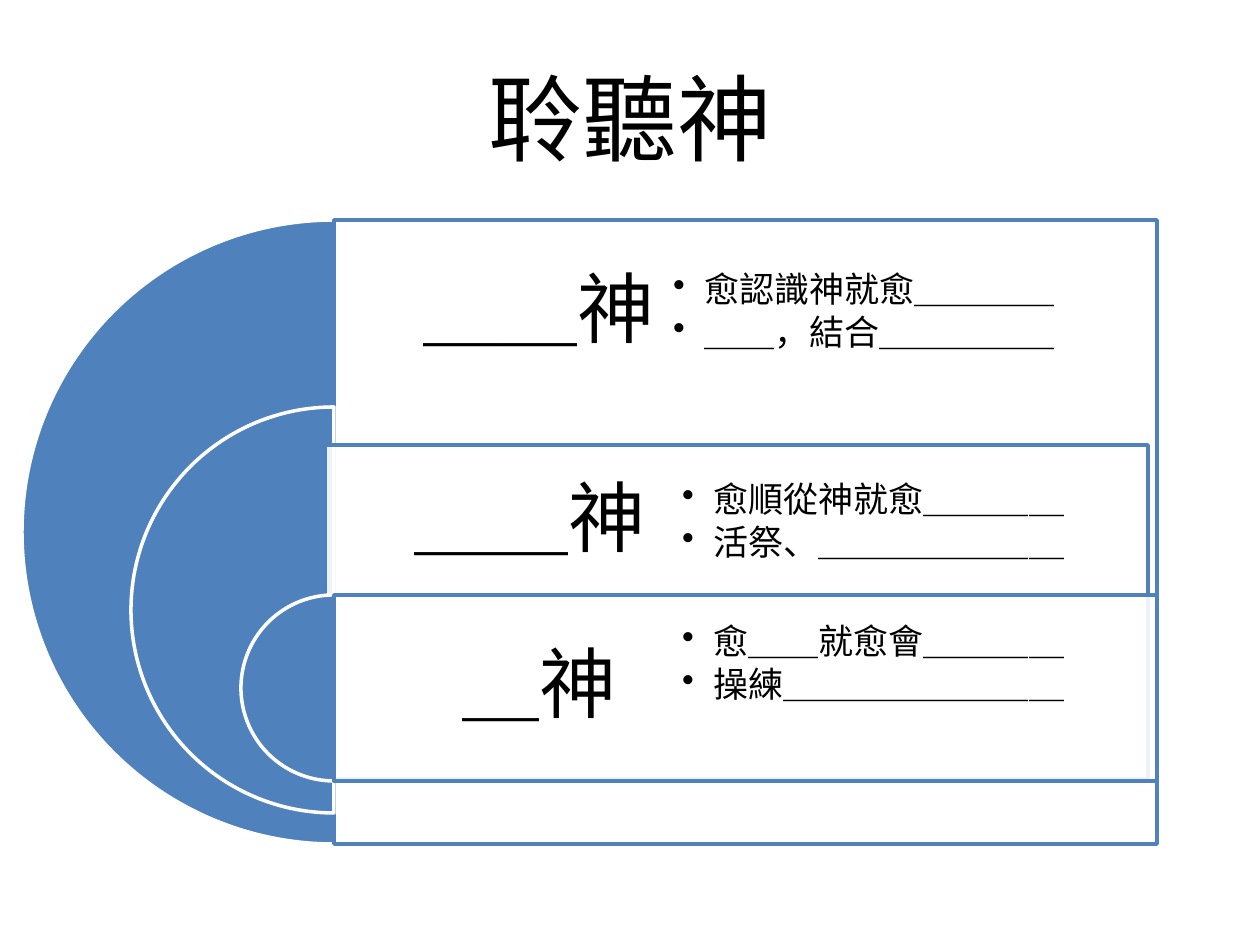
from lxml.etree import SubElement
from pptx import Presentation
from pptx.dml.color import RGBColor
from pptx.enum.shapes import MSO_SHAPE as Shape
from pptx.enum.text import MSO_ANCHOR as Anchor, PP_ALIGN as Align
from pptx.oxml.ns import qn
from pptx.util import Emu, Pt

PX = 914400 / 126
BLUE, WHITE, BLACK = "4F81BD", "FFFFFF", "000000"


def px(*lengths):
    """Turn pixel lengths into EMU."""
    return [Emu(round(length * PX)) for length in lengths]


def color(target, hex_color):
    """Give a fill or a font a solid colour."""
    fill = getattr(target, "fill", target)
    fill.solid()
    fill.fore_color.rgb = RGBColor.from_string(hex_color)


presentation = Presentation()
presentation.slide_width, presentation.slide_height = px(1260, 945)
slide = presentation.slides.add_slide(presentation.slide_layouts[5])
texts = []  # text frame, lines, size, alignment, space after, inset

title = slide.shapes.title
title.left, title.top, title.width, title.height = px(63, 38, 1134, 158)
texts.append((title.text_frame, ["聆聽神"], 54, Align.CENTER, 0, 12))

# Half circles share one centre line; each box sits to its right
AXIS = 334
rings = [
    # circle top, diameter, box left, box top, box height, label height, label
    (220, 624, AXIS, 220, 624, 186, "＿＿神"),
    (407, 406, 325, 445, 334, 154, "＿＿神"),
    (595, 186, AXIS, 595, 186, 186, "＿神"),
]
for top, diameter, box_left, box_top, box_height, label_height, label in rings:
    half_circle = slide.shapes.add_shape(
        Shape.PIE, *px(AXIS - diameter / 2, top, diameter, diameter))
    half_circle.adjustments[0] = 54
    half_circle.adjustments[1] = 162
    box = slide.shapes.add_shape(
        Shape.RECTANGLE, *px(box_left, box_top, 823, box_height))
    for shape, fill, line in ((half_circle, BLUE, WHITE), (box, WHITE, BLUE)):
        shape.shadow.inherit = False
        color(shape.fill, fill)
        color(shape.line, line)
        shape.line.width = Pt(2)
    box_color = box.fill._xPr.find(qn("a:solidFill"))[0]
    SubElement(box_color, qn("a:alpha"), val="90000")

    label_box = slide.shapes.add_textbox(*px(box_left, box_top, 411, label_height))
    texts.append((label_box.text_frame, [label], 44, Align.CENTER, 15, 23))

bullet_lists = [
    (663, 220, ["愈認識神就愈＿＿＿＿", "＿＿，結合＿＿＿＿＿"]),
    (672, 430, ["愈順從神就愈＿＿＿＿", "活祭、＿＿＿＿＿＿＿"]),
    (672, 572, ["愈＿＿就愈會＿＿＿＿", "操練＿＿＿＿＿＿＿＿"]),
]
for left, top, lines in bullet_lists:
    bullet_box = slide.shapes.add_textbox(*px(left, top, 560, 186))
    texts.append((bullet_box.text_frame, lines, 20, Align.LEFT, 3, 10))

for frame, lines, size, alignment, space_after, inset in texts:
    frame.word_wrap = True
    frame.vertical_anchor = Anchor.MIDDLE
    (frame.margin_left, frame.margin_top,
     frame.margin_right, frame.margin_bottom) = px(*[inset] * 4)
    for index, line in enumerate(lines):
        paragraph = frame.add_paragraph() if index else frame.paragraphs[0]
        paragraph.alignment = alignment
        if space_after:
            paragraph.line_spacing = 0.9
            paragraph.space_after = Pt(space_after)
        run = paragraph.add_run()
        run.text = line
        run.font.name = "Lato"
        run.font.size = Pt(size)
        color(run.font, BLACK)
        if alignment == Align.LEFT:
            properties = paragraph._p.get_or_add_pPr()
            properties.set("marL", "228600")
            properties.set("indent", "-228600")
            SubElement(properties, qn("a:buChar"), char="•")

presentation.save("out.pptx")
